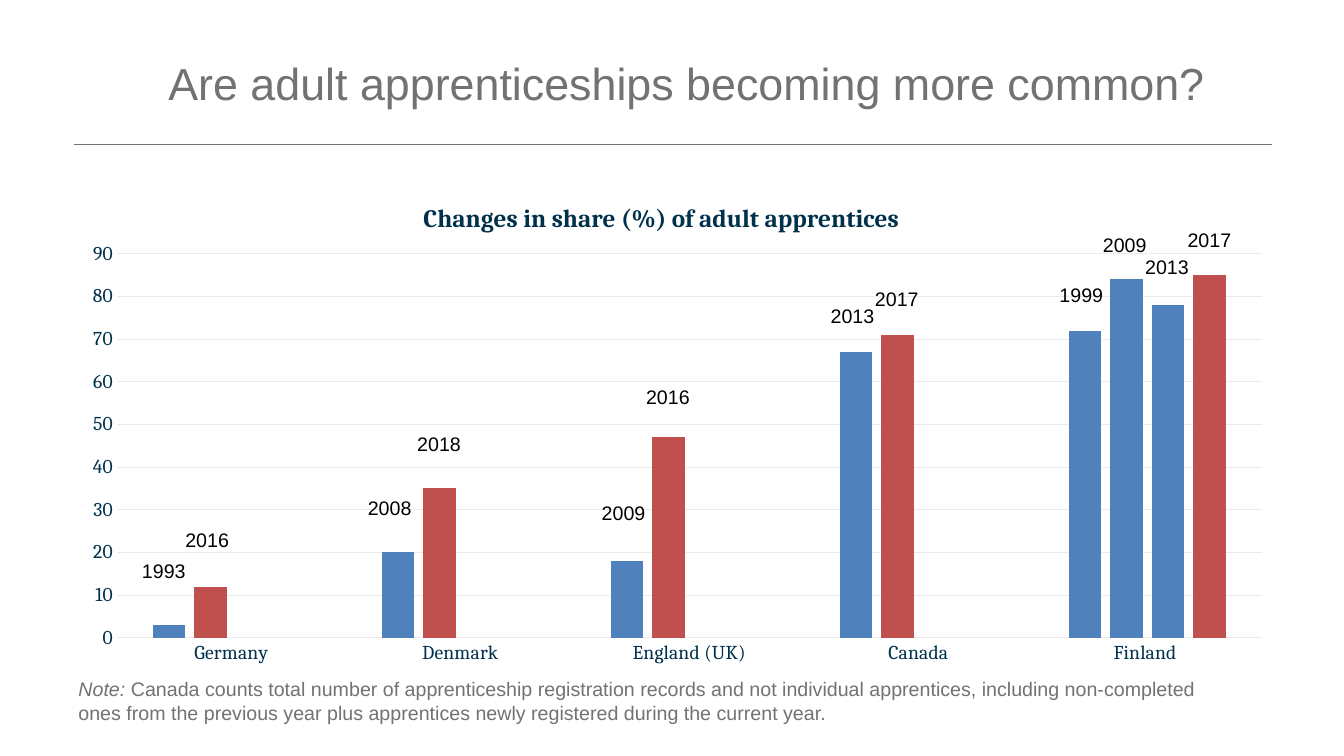
from pptx import Presentation
from pptx.chart.data import CategoryChartData
from pptx.dml.color import RGBColor
from pptx.enum.chart import XL_CHART_TYPE, XL_TICK_MARK
from pptx.enum.shapes import MSO_CONNECTOR
from pptx.enum.text import MSO_ANCHOR, PP_ALIGN
from pptx.oxml import parse_xml
from pptx.oxml.ns import nsdecls, qn
from pptx.util import Inches, Pt

COLUMN_CLUSTERED = XL_CHART_TYPE.COLUMN_CLUSTERED
NO_TICK = XL_TICK_MARK.NONE
STRAIGHT = MSO_CONNECTOR.STRAIGHT
MIDDLE = MSO_ANCHOR.MIDDLE
LEFT = PP_ALIGN.LEFT

GREY = RGBColor(0x72, 0x72, 0x72)
BLACK = RGBColor(0, 0, 0)
NAVY = RGBColor(0x00, 0x31, 0x4C)
GRID = RGBColor(0xEA, 0xEA, 0xEA)
BLUE = RGBColor(0x4F, 0x81, 0xBD)
RED = RGBColor(0xC0, 0x50, 0x4D)

COUNTRIES = ["Germany", "Denmark", "England (UK)", "Canada", "Finland "]
SERIES = [
    ("Series 1", [3, 20, 18, 67, 72], BLUE),
    ("Series 2", [12, 35, 47, 71, 84], RED),
    ("Series 3", [None, None, None, None, 78], BLUE),
    ("Series 4", [None, None, None, None, 85], RED),
]
YEAR_LABELS = [
    ("1993", 1.31, 5.5), ("2016", 1.74, 5.19),
    ("2008", 3.55, 4.87), ("2018", 4.04, 4.24),
    ("2009", 5.87, 4.92), ("2016", 6.31, 3.77),
    ("2013", 8.14, 2.97), ("2017", 8.58, 2.8),
    ("1999", 10.41, 2.76), ("2009", 10.84, 2.26),
    ("2013", 11.26, 2.48), ("2017", 11.68, 2.21),
]


class SlideBuilder:
    """Adds consistently styled elements to one slide."""

    def __init__(self, slide):
        self.slide = slide
        self.text_font = "Arial"
        self.chart_font = "Cambria"

    def style(self, font, size, color, name=None):
        font.name = name or self.text_font
        font.size = Pt(size)
        font.color.rgb = color

    def title(self, text, left, top, width, height):
        shape = self.slide.shapes.title
        shape.left, shape.top = Inches(left), Inches(top)
        shape.width, shape.height = Inches(width), Inches(height)
        frame = shape.text_frame
        frame.text = text
        frame.vertical_anchor = MIDDLE
        paragraph = frame.paragraphs[0]
        paragraph.alignment = LEFT
        self.style(paragraph.font, 32, GREY)

    def rule(self, left, top, width):
        line = self.slide.shapes.add_connector(
            STRAIGHT, Inches(left), Inches(top), Inches(left + width), Inches(top))
        line.line.color.rgb = GREY
        line.line.width = Pt(0.5)
        line._element.spPr.append(parse_xml(f"<a:effectLst {nsdecls('a')}/>"))

    def text(self, runs, left, top, width, height, color, wrap=True):
        box = self.slide.shapes.add_textbox(
            Inches(left), Inches(top), Inches(width), Inches(height))
        box.text_frame.word_wrap = wrap
        paragraph = box.text_frame.paragraphs[0]
        self.style(paragraph.font, 14, color)
        for text, italic in runs:
            run = paragraph.add_run()
            run.text = text
            if italic:
                run.font.italic = True

    def place(self, parent, index, target="", **fractions):
        for layout in parent.findall(qn("c:layout")):
            parent.remove(layout)
        modes = "".join(f'<c:{key}Mode val="edge"/>' for key in "xy")
        values = "".join(f'<c:{key} val="{value}"/>' for key, value in fractions.items())
        parent.insert(index, parse_xml(
            f"<c:layout {nsdecls('c')}><c:manualLayout>{target}{modes}{values}"
            "</c:manualLayout></c:layout>"))

    def chart(self, heading, left, top, width, height):
        data = CategoryChartData()
        data.categories = COUNTRIES
        for name, values, _ in SERIES:
            data.add_series(name, values)
        chart = self.slide.shapes.add_chart(
            COLUMN_CLUSTERED, Inches(left), Inches(top),
            Inches(width), Inches(height), data).chart
        self.style(chart.font, 10, NAVY, self.chart_font)
        chart.has_legend = False

        chart.has_title = True
        title = chart.chart_title
        title.text_frame.text = heading
        title_font = title.text_frame.paragraphs[0].font
        self.style(title_font, 18, NAVY, self.chart_font)
        title_font.bold = True
        self.place(title._element, 1, x=0.29, y=0.04)
        self.place(chart._chartSpace.chart.plotArea, 0,
                   '<c:layoutTarget val="inner"/>', x=0.04, y=0.155, w=0.948, h=0.77)

        for axis in (chart.category_axis, chart.value_axis):
            axis.major_tick_mark = axis.minor_tick_mark = NO_TICK
            self.style(axis.tick_labels.font, 14, NAVY, self.chart_font)
        values_axis = chart.value_axis
        values_axis.minimum_scale, values_axis.maximum_scale = 0, 90
        values_axis.major_unit = 10
        values_axis.format.line.fill.background()
        for line in (chart.category_axis.format.line, values_axis.major_gridlines.format.line):
            line.color.rgb = GRID
            line.width = Pt(0.75)

        plot = chart.plots[0]
        plot.gap_width, plot.overlap = 219, -27
        plot.vary_by_categories = False
        for series, (_, _, color) in zip(plot.series, SERIES):
            self.fill(series, color)
        finland_2009 = plot.series[1].points[len(COUNTRIES) - 1]
        self.fill(finland_2009, BLUE)

    def fill(self, bar, color):
        bar.format.fill.solid()
        bar.format.fill.fore_color.rgb = color


def main():
    presentation = Presentation()
    presentation.slide_width = Inches(13.33)
    presentation.slide_height = Inches(7.5)
    slide = presentation.slides.add_slide(presentation.slide_layouts[5])
    builder = SlideBuilder(slide)
    builder.rule(0.73, 1.43, 11.89)
    builder.title("Are adult apprenticeships becoming more common?", 1.57, 0.26, 10.81, 1.12)
    builder.chart("Changes in share (%) of adult apprentices", 0.68, 1.75, 11.98, 4.95)
    note = ("Canada counts total number of apprenticeship registration records and not "
            "individual apprentices, including non-completed ones from the previous year "
            "plus apprentices newly registered during the current year.")
    builder.text([("Note: ", True), (note, False)], 0.68, 6.67, 11.3, 0.81, GREY)
    for year, left, top in YEAR_LABELS:
        builder.text([(year, False)], left, top, 0.64, 0.34, BLACK, wrap=False)
    presentation.save("out.pptx")


if __name__ == "__main__":
    main()
